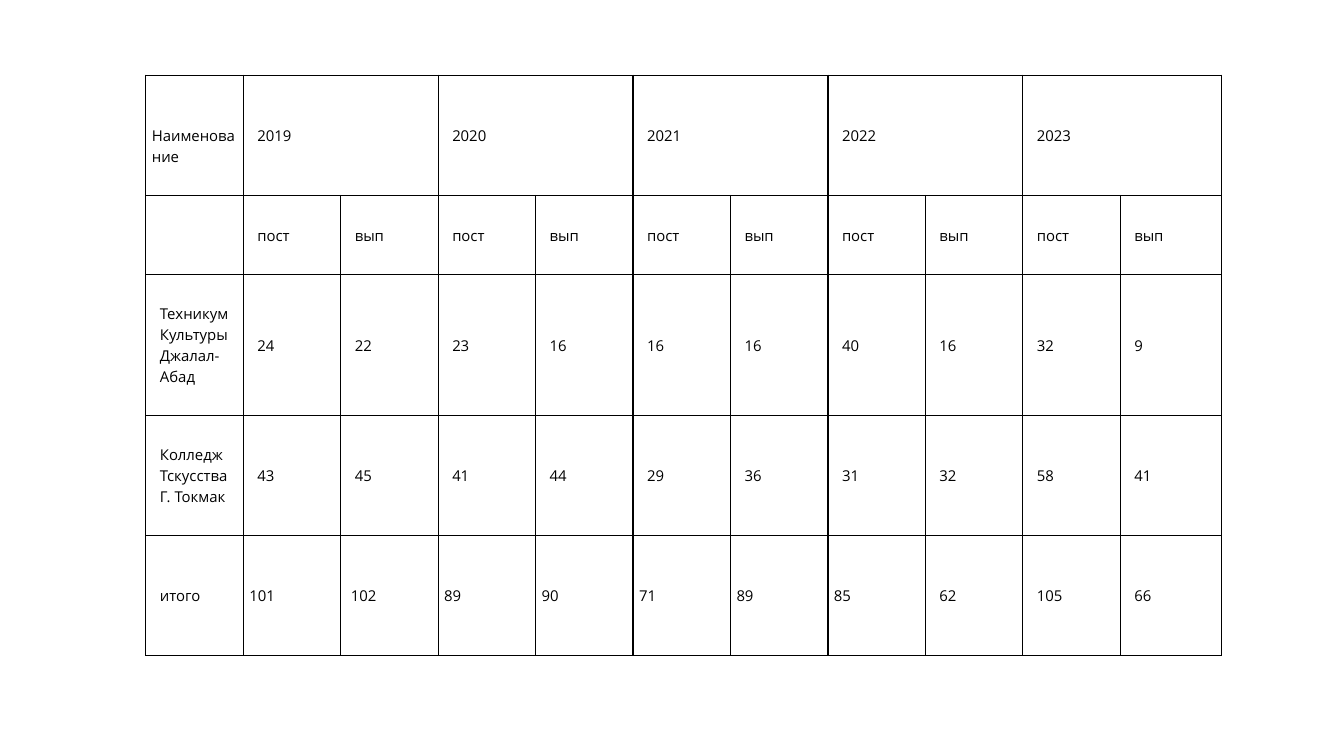
import pptx
import pptx.util
import pptx.dml.color
import pptx.enum.text
import lxml.etree

Inches, Pt = pptx.util.Inches, pptx.util.Pt

THEME = {
    "font": "Open Sans",
    "size": 16,
    "leading": 22.4,
    "ink": "000000",
    "border": 1.5,
    "margin": 0.09,
    "indent": 0.21,
}
NS = "http://schemas.openxmlformats.org/drawingml/2006/main"

# Grid: ten equal columns and a slightly wider last one
LEFT, TOP = 2.17, 1.12
COLS = [1.45] * 10 + [1.51]
ROWS = [1.79, 1.18, 2.09, 1.79]
TOTAL_ROW = 1.79


def write(cell, text, left=THEME["indent"], top=THEME["margin"]):
    """Put text in a cell, one paragraph per line."""
    cell.vertical_anchor = pptx.enum.text.MSO_ANCHOR.MIDDLE
    cell.margin_left, cell.margin_top = Inches(left), Inches(top)
    cell.margin_right = cell.margin_bottom = Inches(THEME["margin"])
    tf = cell.text_frame
    tf.text = text
    for p in tf.paragraphs:
        p.line_spacing = Pt(THEME["leading"])
        p.font.size = Pt(THEME["size"])
        for r in p.runs:
            r.font.name = THEME["font"]
            r.font.size = Pt(THEME["size"])
            r.font.color.rgb = pptx.dml.color.RGBColor.from_string(THEME["ink"])


def add_grid(s, top, heights):
    """Add an unfilled table with every cell bordered."""
    table = s.shapes.add_table(len(heights), len(COLS), Inches(LEFT), Inches(top),
                               Inches(sum(COLS)), Inches(sum(heights))).table
    table.first_row = table.horz_banding = False
    for column, width in zip(table.columns, COLS):
        column.width = Inches(width)
    for row, height in zip(table.rows, heights):
        row.height = Inches(height)
    for cell in table.iter_cells():
        cell.fill.background()
        tcPr = cell._tc.get_or_add_tcPr()
        for i, side in enumerate(("lnL", "lnR", "lnT", "lnB")):
            ln = lxml.etree.Element(f"{{{NS}}}{side}", w=str(Pt(THEME["border"])))
            fill = lxml.etree.SubElement(ln, f"{{{NS}}}solidFill")
            lxml.etree.SubElement(fill, f"{{{NS}}}srgbClr", val=THEME["ink"])
            tcPr.insert(i, ln)
    return table


prs = pptx.Presentation()
prs.slide_width, prs.slide_height = Inches(20), Inches(11.25)
s = prs.slides.add_slide(prs.slide_layouts[6])

# Header: each year spans an admissions and a graduates column
colleges = add_grid(s, TOP, ROWS)
write(colleges.cell(0, 0), "Наименование", left=THEME["margin"], top=0.4)
for i, year in enumerate(range(2019, 2024)):
    first = 1 + 2 * i
    colleges.cell(0, first).merge(colleges.cell(0, first + 1))
    write(colleges.cell(0, first), str(year))
    write(colleges.cell(1, first), "пост")
    write(colleges.cell(1, first + 1), "вып")

# Figures by college
figures = [
    ["Техникум\nКультуры\nДжалал-\nАбад", 24, 22, 23, 16, 16, 16, 40, 16, 32, 9],
    ["Колледж\nТскусства\nГ. Токмак", 43, 45, 41, 44, 29, 36, 31, 32, 58, 41],
]
for row, values in enumerate(figures, start=2):
    for col, value in enumerate(values):
        write(colleges.cell(row, col), str(value))

# Totals: the early years sit closer to the cell's left edge
totals = add_grid(s, TOP + sum(ROWS), [TOTAL_ROW])
total_values = ["итого", 101, 102, 89, 90, 71, 89, 85, 62, 105, 66]
insets = [THEME["indent"]] + [THEME["margin"]] * 7 + [THEME["indent"]] * 3
insets[2] = 0.15
for col, (value, inset) in enumerate(zip(total_values, insets)):
    write(totals.cell(0, col), str(value), left=inset)

prs.save("out.pptx")
